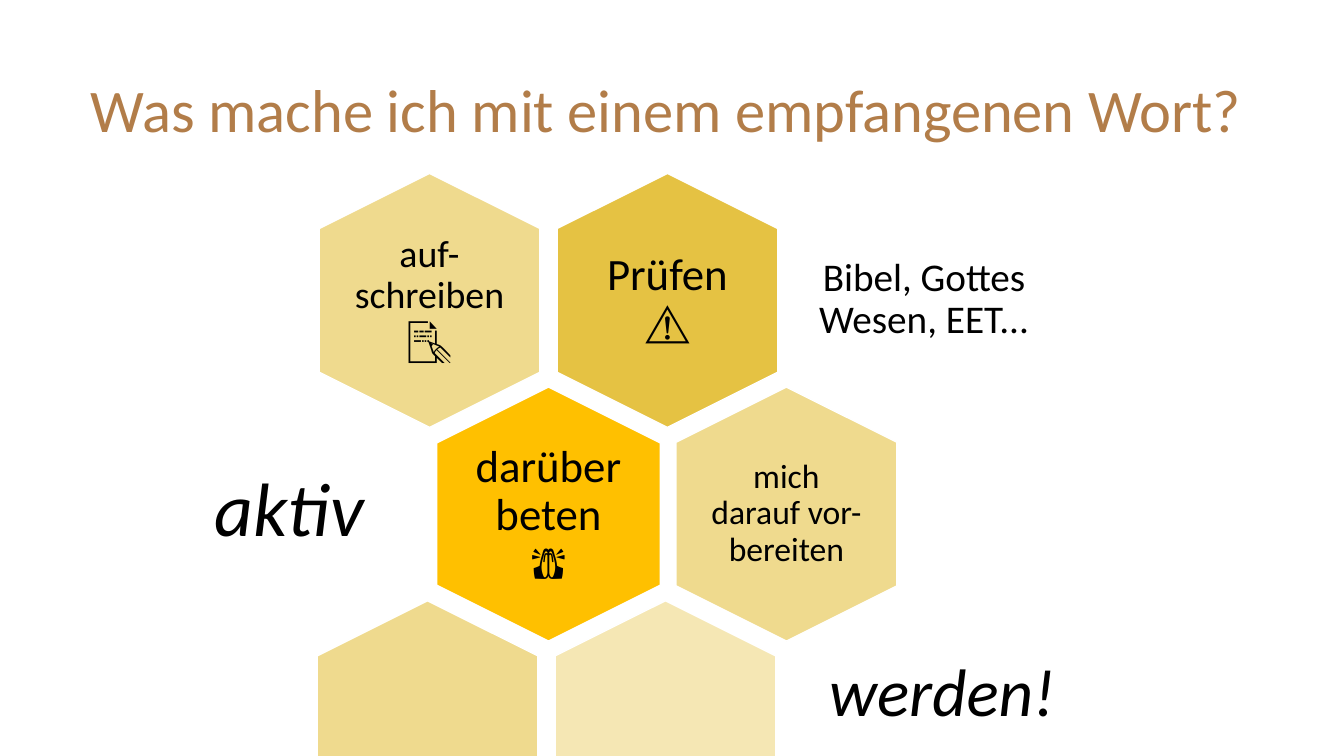
from pptx import Presentation
from pptx.dml.color import RGBColor
from pptx.enum.shapes import MSO_SHAPE as Shape
from pptx.enum.text import MSO_ANCHOR as Anchor, PP_ALIGN as Align
from pptx.util import Inches, Pt

FONT = "Calibri"
BLACK, WHITE, BROWN = "000000", "FFFFFF", "B27D49"
GOLD, AMBER, SAND, CREAM = "E5C243", "FFC000", "EFDA8E", "F5E7B4"

HEXAGON_LENGTH, HEXAGON_WIDTH = 2.52, 2.19
COLUMN_PITCH, ROW_PITCH = 2.36, 2.12
FIRST_ROW_CENTER = 2.98
LABEL_WIDTH, LABEL_HEIGHT = 1.51, 1.73

# Per row: centre of the first cell, then (fill, label pieces, vertical inset, cell width)
ROWS = [
    (4.26, [(SAND, [("auf-schreiben\n", 27), ("📝", 32)], 0, HEXAGON_WIDTH),
            (GOLD, [("Prüfen\n⚠", 32)], 0.13, HEXAGON_WIDTH)]),
    (5.44, [(AMBER, [("darüber beten ", 32), ("🙏", 29)], 0.13, 2.22),
            (SAND, [("mich\ndarauf vor-bereiten", 24)], 0, HEXAGON_WIDTH)]),
    (4.24, [(SAND, [], 0, HEXAGON_WIDTH),
            (CREAM, [], 0, HEXAGON_WIDTH)]),
]

# Box, text, size, inset, italic
NOTES = [
    ((7.76, 2.22, 2.81, 1.51), "Bibel, Gottes Wesen, EET...", 28, 0.12, False),
    ((1.51, 4.32, 2.72, 1.51), "aktiv", 54, 0.23, True),
    ((7.94, 6.44, 2.81, 0.9), "werden!", 48, 0.2, True),
]


def rgb(value):
    return RGBColor.from_string(value)


def write(frame, pieces, color=BLACK, align=Align.CENTER, italic=False):
    """Fill a text frame with (text, size) pieces; a newline is a line break."""
    frame.word_wrap = True
    frame.vertical_anchor = Anchor.MIDDLE
    paragraph = frame.paragraphs[0]
    paragraph.alignment = align
    paragraph.line_spacing = 0.9
    for text, size in pieces:
        for index, line in enumerate(text.split("\n")):
            if index:
                paragraph.add_line_break()
            if line:
                run = paragraph.add_run()
                run.text = line
                run.font.name = FONT
                run.font.size = Pt(size)
                run.font.italic = italic
                run.font.color.rgb = rgb(color)


def add_text(slide, box, pieces, inset_x=0, inset_y=0, **style):
    frame = slide.shapes.add_textbox(*map(Inches, box)).text_frame
    frame.margin_left = frame.margin_right = Inches(inset_x)
    frame.margin_top = frame.margin_bottom = Inches(inset_y)
    write(frame, pieces, **style)


def centered_box(center_x, center_y, width, height):
    return center_x - width / 2, center_y - height / 2, width, height


def add_title(slide, box, text):
    title = slide.shapes.title
    title.left, title.top, title.width, title.height = map(Inches, box)
    write(title.text_frame, [(text, 43.2)], color=BROWN, align=Align.LEFT)


def add_cell(slide, center_x, center_y, fill, pieces, inset_y, width):
    box = centered_box(center_x, center_y, HEXAGON_LENGTH, width)
    hexagon = slide.shapes.add_shape(Shape.HEXAGON, *map(Inches, box))
    hexagon.adjustments[0] = 0.25
    hexagon.rotation = 90
    hexagon.shadow.inherit = False
    hexagon.fill.solid()
    hexagon.fill.fore_color.rgb = rgb(fill)
    hexagon.line.color.rgb = rgb(WHITE)
    hexagon.line.width = Pt(1)
    if pieces:
        label_box = centered_box(center_x, center_y, LABEL_WIDTH, LABEL_HEIGHT)
        add_text(slide, label_box, pieces, inset_y=inset_y)


def add_honeycomb(slide):
    for row, (first_center, cells) in enumerate(ROWS):
        for column, cell in enumerate(cells):
            add_cell(slide, first_center + column * COLUMN_PITCH,
                     FIRST_ROW_CENTER + row * ROW_PITCH, *cell)


def add_notes_beside(slide):
    for box, text, size, inset, italic in NOTES:
        add_text(slide, box, [(text, size)], inset, inset, italic=italic)


def main():
    presentation = Presentation()
    presentation.slide_width = Inches(13.33)
    presentation.slide_height = Inches(7.5)
    slide = presentation.slides.add_slide(presentation.slide_layouts[5])
    add_title(slide, (0.8, 0.4, 11.99, 1.45),
              "Was mache ich mit einem empfangenen Wort?")
    add_honeycomb(slide)
    add_notes_beside(slide)
    presentation.save("out.pptx")


if __name__ == "__main__":
    main()
